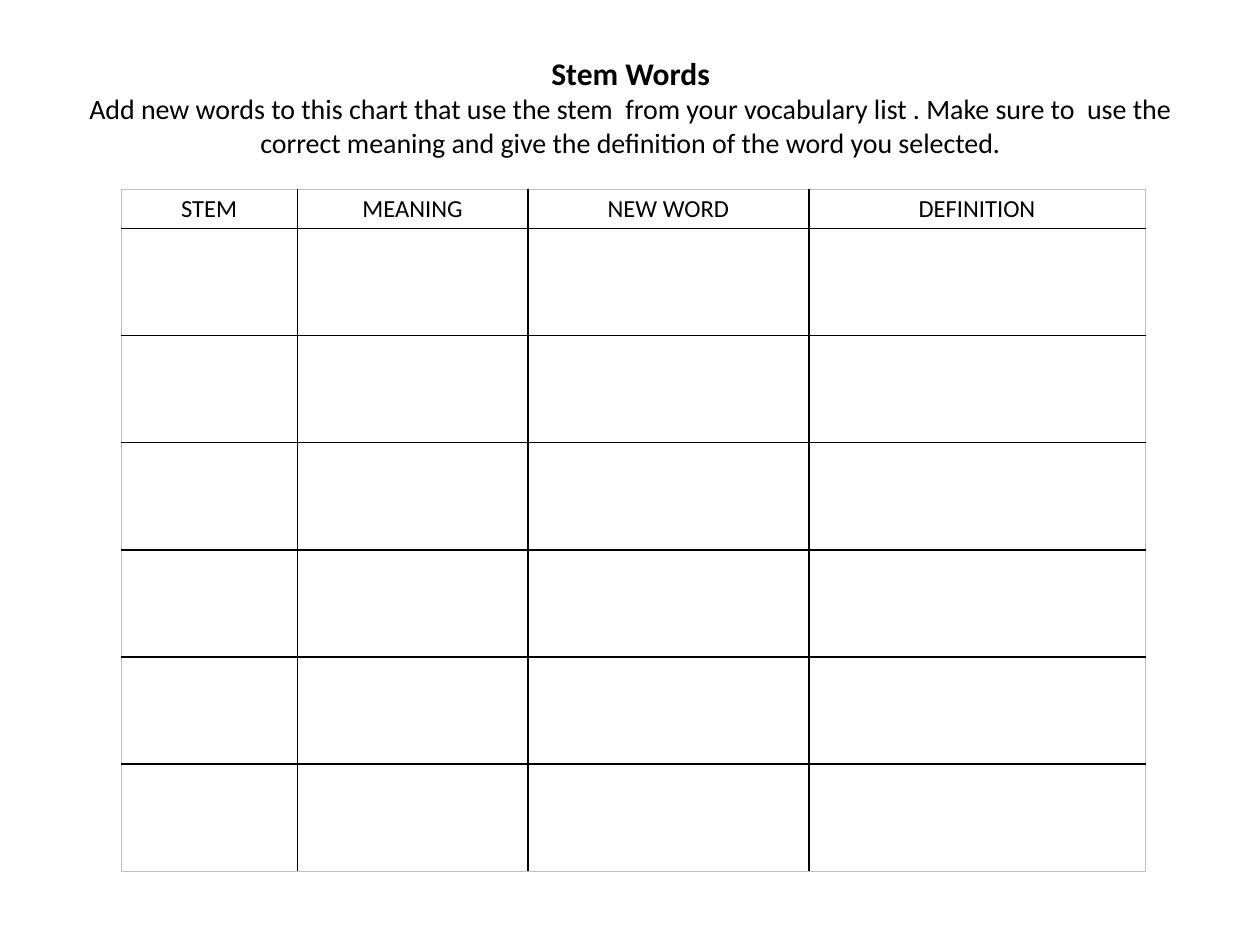
from lxml import etree
from pptx import Presentation, util as u
from pptx.dml.color import RGBColor
from pptx.enum import text
from pptx.oxml import ns

INK = {"black": "000000", "white": "FFFFFF", "edge": "BFBFBF"}
FONT = "Calibri"
HEADS = ["STEM", "MEANING", "NEW WORD", "DEFINITION"]
WIDTHS = [1.4, 1.83, 2.23, 2.67]
HEIGHTS = [0.31] + [0.85] * 6
TITLE = "Stem Words"
TASK = ("Add new words to this chart that use the stem  from your vocabulary list . "
        "Make sure to  use the correct meaning and give the definition of the word "
        "you selected.")


def style(para, size, bold=False):
    para.alignment = text.PP_ALIGN.CENTER
    for run in para.runs:
        run.font.name = FONT
        run.font.size = u.Pt(size)
        run.font.bold = bold
        run.font.color.rgb = RGBColor.from_string(INK["black"])


def add_intro(slide):
    box = slide.shapes.add_textbox(u.Inches(0.61), u.Inches(0.38),
                                   u.Inches(8.79), u.Inches(0.94))
    frame = box.text_frame
    frame.word_wrap = True
    frame.auto_size = text.MSO_AUTO_SIZE.SHAPE_TO_FIT_TEXT
    frame.text = f"{TITLE}\n{TASK}"
    style(frame.paragraphs[0], 18, True)
    style(frame.paragraphs[1], 16)


def set_side(cell, side, outer):
    props = cell._tc.get_or_add_tcPr()
    line = etree.SubElement(props, ns.qn(f"a:{side}"),
                            w=str(u.Pt(0.5 if outer else 1)))
    fill = etree.SubElement(line, ns.qn("a:solidFill"))
    etree.SubElement(fill, ns.qn("a:srgbClr"),
                     val=INK["edge" if outer else "black"])


def style_cell(cell, row, col):
    cell.margin_left = cell.margin_right = u.Inches(0.13)
    cell.margin_top = cell.margin_bottom = u.Inches(0.04)
    sides = {"lnL": col == 0, "lnR": col == len(WIDTHS) - 1,
             "lnT": row == 0, "lnB": row == len(HEIGHTS) - 1}
    for side, outer in sides.items():
        set_side(cell, side, outer)
    cell.fill.solid()
    cell.fill.fore_color.rgb = RGBColor.from_string(INK["white"])


def add_grid(slide):
    grid = slide.shapes.add_table(
        len(HEIGHTS), len(WIDTHS), u.Inches(0.96), u.Inches(1.5),
        u.Inches(sum(WIDTHS)), u.Inches(sum(HEIGHTS))).table
    grid.first_row = grid.horz_banding = False
    for col, width in zip(grid.columns, WIDTHS):
        col.width = u.Inches(width)
    for r, height in enumerate(HEIGHTS):
        grid.rows[r].height = u.Inches(height)
        for c in range(len(WIDTHS)):
            style_cell(grid.cell(r, c), r, c)
    for c, head in enumerate(HEADS):
        frame = grid.cell(0, c).text_frame
        frame.text = head
        style(frame.paragraphs[0], 14)


def main():
    deck = Presentation()
    deck.slide_width = u.Inches(10)
    deck.slide_height = u.Inches(7.5)
    slide = deck.slides.add_slide(deck.slide_layouts[6])
    add_intro(slide)
    add_grid(slide)
    deck.save("out.pptx")


if __name__ == "__main__":
    main()
